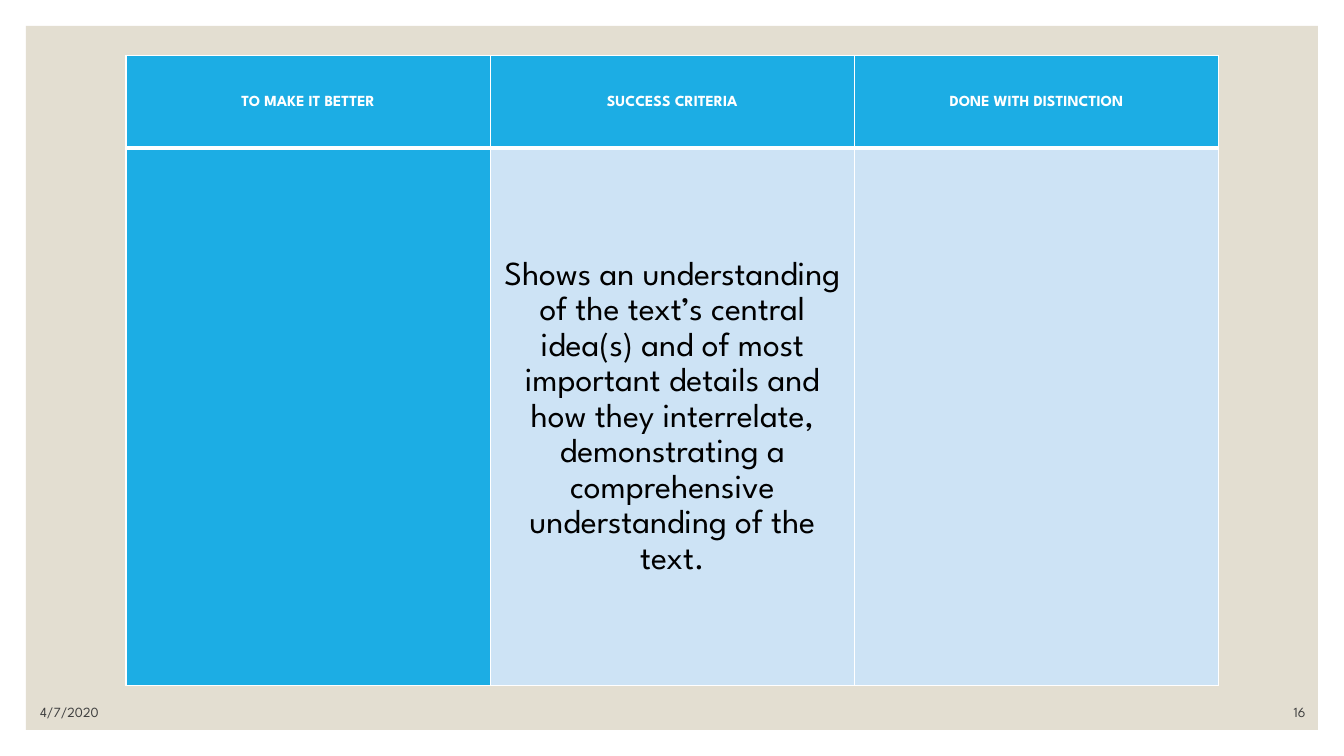
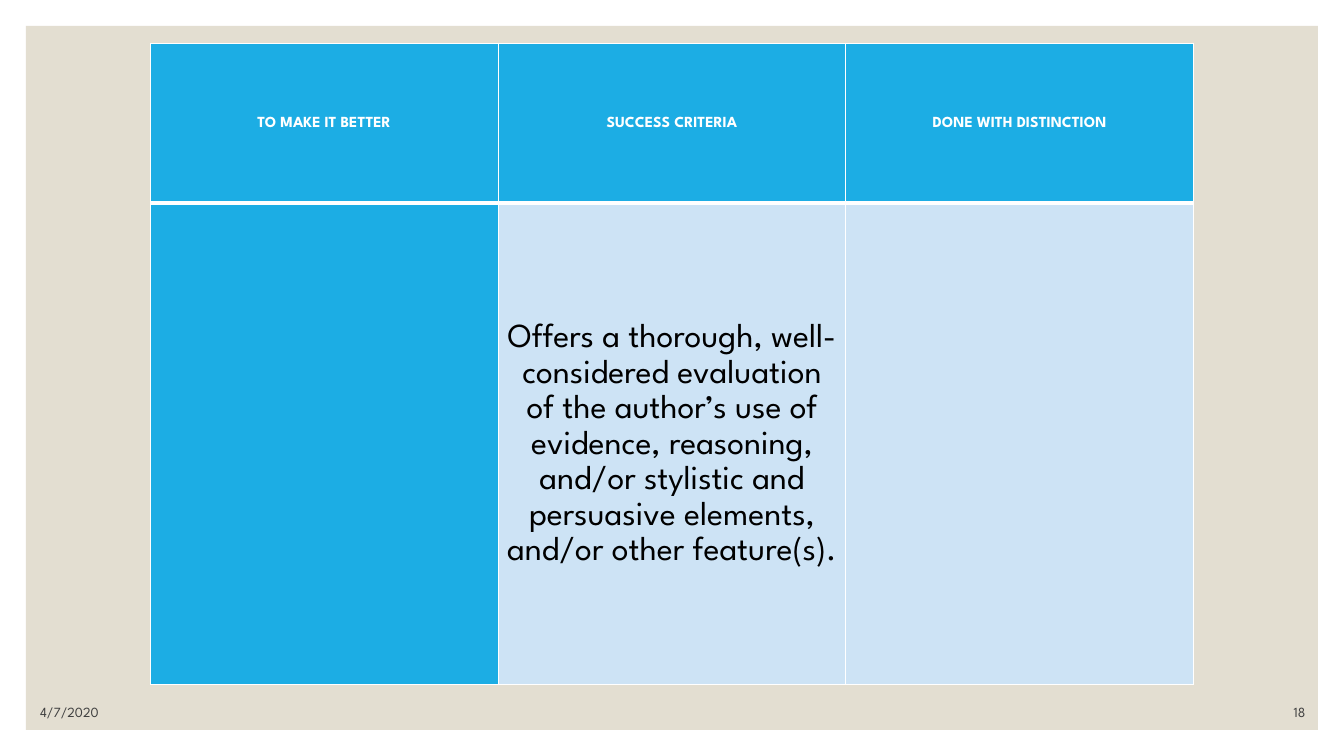
from lxml.etree import SubElement
from pptx import Presentation
from pptx.dml.color import RGBColor
from pptx.enum.shapes import MSO_SHAPE as Preset
from pptx.enum.text import MSO_ANCHOR as Anchor, PP_ALIGN as Align
from pptx.oxml.ns import qn
from pptx.util import Pt

WHITE = RGBColor(0xFF, 0xFF, 0xFF)
BLACK = RGBColor(0x00, 0x00, 0x00)
GREY = RGBColor(0x40, 0x40, 0x40)
SAND = RGBColor(0xE3, 0xDE, 0xD1)
BLUE = RGBColor(0x1C, 0xAD, 0xE4)
PALE_BLUE = RGBColor(0xCD, 0xE3, 0xF5)

FONT = "League Spartan"
HEADER_FONT = {"name": FONT, "size": Pt(11), "bold": True}
BODY_FONT = {"name": FONT, "size": Pt(24), "bold": False}
FOOTER_FONT = {"name": FONT, "size": Pt(10)}
CELL_FORMAT = {"vertical_anchor": Anchor.MIDDLE, "margin_left": Pt(5), "margin_right": Pt(5),
               "margin_top": 0, "margin_bottom": 0}
CELL_PARAGRAPH = {"alignment": Align.CENTER, "line_spacing": 1.15}
TABLE_FORMAT = {"first_row": False, "horz_banding": False}

DATE = "4/7/2020"
HEADINGS = ["TO MAKE IT BETTER", "SUCCESS CRITERIA", "DONE WITH DISTINCTION"]
RUBRICS = [
    {"number": "16", "left": 90, "top": 39.6, "width": 780.5, "heights": (66, 384.2),
     "criterion": "Shows an understanding of the text’s central idea(s) and of most important "
                  "details and how they interrelate, demonstrating a comprehensive "
                  "understanding of the text."},
    {"number": "18", "left": 107.4, "top": 30.8, "width": 745.2, "heights": (114.4, 343.5),
     "criterion": "Offers a thorough, well-considered evaluation of the author’s use of "
                  "evidence, reasoning, and/or stylistic and persuasive elements, and/or "
                  "other feature(s)."},
]


def apply(target, values):
    for name, value in values.items():
        setattr(target, name, value)


class RubricDeck:
    """Holds the deck's style and the slide being built."""

    def __init__(self):
        self.deck = Presentation()
        apply(self.deck, {"slide_width": Pt(960), "slide_height": Pt(540)})
        self.slide = None

    def new_slide(self):
        self.slide = self.deck.slides.add_slide(self.deck.slide_layouts[6])
        if len(self.deck.slides) == 1:
            self.master_panel()

    def master_panel(self):
        panel = self.slide.shapes.add_shape(Preset.RECTANGLE, Pt(18.6), Pt(18.6), Pt(922.8), Pt(502.8))
        panel.shadow.inherit = False
        panel.fill.solid()
        panel.fill.fore_color.rgb = SAND
        panel.line.fill.background()
        self.deck.slide_master.shapes.element.insert(2, panel.element)

    def put_text(self, frame, text, font, color, paragraph_format):
        paragraph = frame.paragraphs[0]
        apply(paragraph, paragraph_format)
        run = paragraph.add_run()
        run.text = text
        apply(run.font, font)
        run.font.color.rgb = color

    def footer(self, text, left, width, alignment):
        box = self.slide.shapes.add_textbox(Pt(left), Pt(496.8), Pt(width), Pt(21.6))
        apply(box.text_frame, {"word_wrap": True, "vertical_anchor": Anchor.BOTTOM})
        self.put_text(box.text_frame, text, FOOTER_FONT, GREY, {"alignment": alignment})

    def borders(self, cell, widths):
        properties = cell._tc.get_or_add_tcPr()
        for side, width in zip("LRTB", widths):
            line = SubElement(properties, qn(f"a:ln{side}"), w=str(Pt(width)))
            solid = SubElement(line, qn("a:solidFill"))
            SubElement(solid, qn("a:srgbClr"), val=str(WHITE))

    def cell(self, cell, text, fill, font, color, widths):
        apply(cell, CELL_FORMAT)
        self.borders(cell, widths)
        cell.fill.solid()
        cell.fill.fore_color.rgb = fill
        if text:
            self.put_text(cell.text_frame, text, font, color, CELL_PARAGRAPH)

    def rubric(self, criterion, left, top, width, heights):
        table = self.slide.shapes.add_table(
            2, len(HEADINGS), Pt(left), Pt(top), Pt(width), Pt(sum(heights))).table
        apply(table, TABLE_FORMAT)
        for row, height in zip(table.rows, heights):
            row.height = Pt(height)
        body = zip(["", criterion, ""], [BLUE, PALE_BLUE, PALE_BLUE])
        for index, (heading, (text, fill)) in enumerate(zip(HEADINGS, body)):
            table.columns[index].width = Pt(width / len(HEADINGS))
            self.cell(table.cell(0, index), heading, BLUE, HEADER_FONT, WHITE, (1, 1, 1, 3))
            self.cell(table.cell(1, index), text, fill, BODY_FONT, BLACK, (1, 1, 3, 1))


def main():
    rubrics = RubricDeck()
    for rubric in RUBRICS:
        rubrics.new_slide()
        rubrics.footer(DATE, 21.6, 216, Align.LEFT)
        rubrics.footer(rubric["number"], 824.4, 115.2, Align.RIGHT)
        rubrics.rubric(rubric["criterion"], rubric["left"], rubric["top"],
                       rubric["width"], rubric["heights"])
    rubrics.deck.save("out.pptx")


if __name__ == "__main__":
    main()
